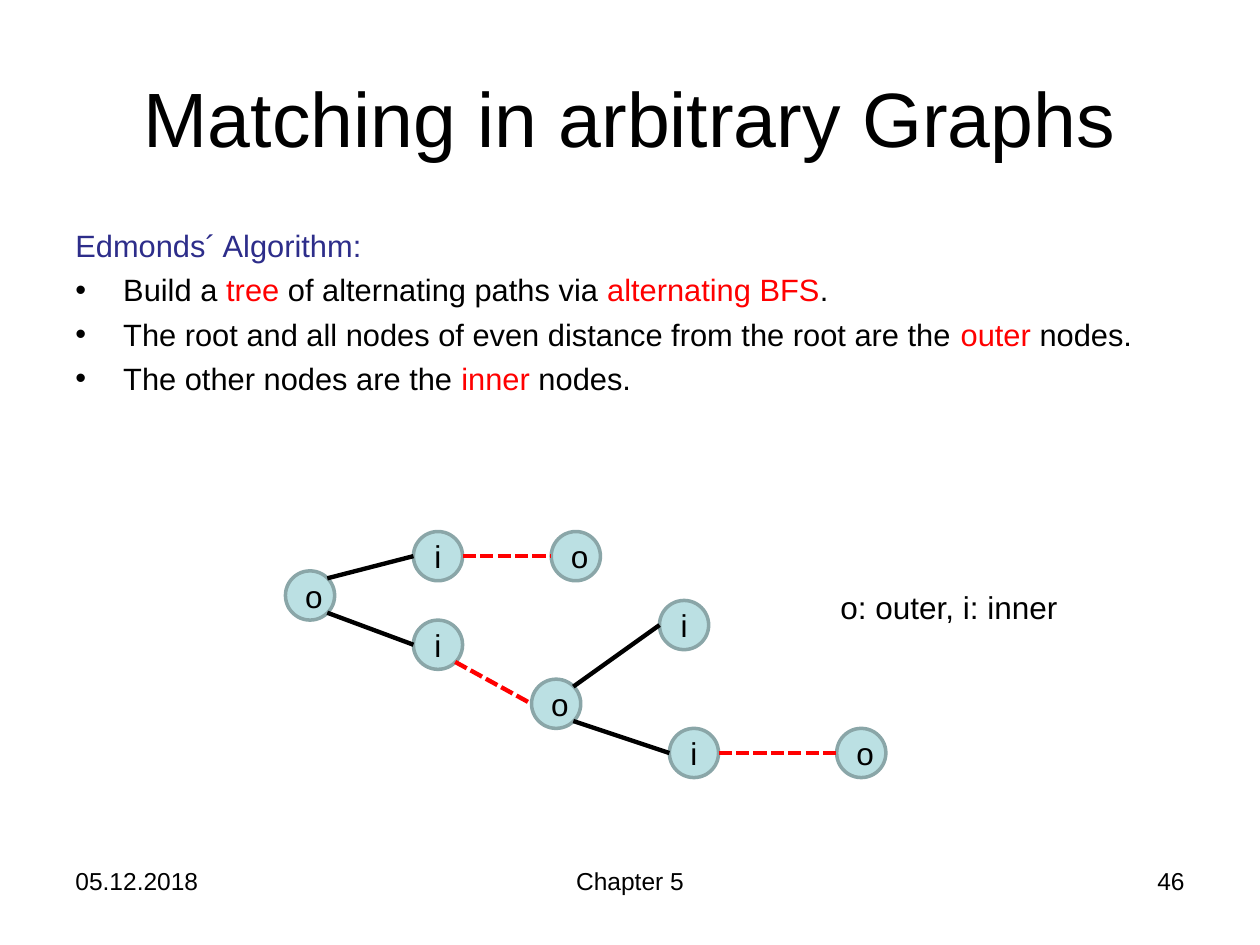
from dataclasses import dataclass

from lxml import etree
from pptx import Presentation
from pptx.dml.color import RGBColor
from pptx.enum.dml import MSO_LINE
from pptx.enum.shapes import MSO_CONNECTOR, MSO_SHAPE
from pptx.enum.text import MSO_ANCHOR, PP_ALIGN
from pptx.oxml.ns import qn
from pptx.util import Inches, Pt

LEFT, CENTER, RIGHT = PP_ALIGN.LEFT, PP_ALIGN.CENTER, PP_ALIGN.RIGHT
TOP, MIDDLE = MSO_ANCHOR.TOP, MSO_ANCHOR.MIDDLE
ELLIPSE, STRAIGHT, DASHED = MSO_SHAPE.OVAL, MSO_CONNECTOR.STRAIGHT, MSO_LINE.SQUARE_DOT

FONT = "Arial"
COLORS = {
    "black": "000000",
    "red": "FF0000",
    "heading": "2D2D8A",
    "node": "BBE0E3",
    "outline": "8AA6A8",
}

# The slide is a grid of 128 columns by 96 rows of square cells
SLIDE_WIDTH, SLIDE_HEIGHT = Inches(10), Inches(7.5)
CELL = SLIDE_WIDTH / 128
NODE_SIZE = 5
HANGING = Inches(0.38)

# Attachment points on a node, as shares of its size
SITES = {
    "left": (0, 0.5),
    "right": (1, 0.5),
    "upper right": (0.85, 0.15),
    "lower right": (0.85, 0.85),
}


@dataclass(frozen=True)
class Box:
    column: float
    row: float
    columns: float
    rows: float


@dataclass(frozen=True)
class Label:
    text: str
    box: Box
    size: float
    alignment: PP_ALIGN = LEFT
    anchor: MSO_ANCHOR = TOP
    wrap: bool = True


@dataclass(frozen=True)
class Node:
    label: str
    column: int
    row: int


@dataclass(frozen=True)
class Edge:
    start: str
    start_site: str
    end: str
    matched: bool = False


LABELS = [
    Label("Matching in arbitrary Graphs", Box(6.4, 3.84, 115.2, 16), 44, CENTER, MIDDLE),
    Label("05.12.2018", Box(6.4, 87.4, 29.9, 6.66), 14),
    Label("Chapter 5", Box(43.7, 87.4, 40.6, 6.66), 14, CENTER),
    Label("46", Box(91.7, 87.4, 29.9, 6.66), 14, RIGHT),
    Label("o: outer, i: inner", Box(84.1, 59.1, 24.8, 5.1), 18, wrap=False),
]

BODY_BOX = Box(6.4, 22.4, 115.2, 63.4)
BODY_SIZE = 17.6
HEADING = [("Edmonds´ Algorithm:", "heading")]
BULLETS = [
    [("Build a ", "black"), ("tree", "red"), (" of alternating paths via ", "black"),
     ("alternating BFS", "red"), (".", "black")],
    [("The root and all nodes of even distance from the root are the ", "black"),
     ("outer ", "red"), ("nodes.", "black")],
    [("The other nodes are the ", "black"), ("inner", "red"), (" nodes.", "black")],
]

NODES = {
    "root": Node("o", 29, 58),
    "upper inner": Node("i", 42, 54),
    "upper outer": Node("o", 56, 54),
    "lower inner": Node("i", 42, 63),
    "lower outer": Node("o", 54, 69),
    "branch inner": Node("i", 67, 61),
    "last inner": Node("i", 68, 74),
    "last outer": Node("o", 85, 74),
}
EDGES = [
    Edge("root", "upper right", "upper inner"),
    Edge("root", "lower right", "lower inner"),
    Edge("upper inner", "right", "upper outer", matched=True),
    Edge("lower inner", "lower right", "lower outer", matched=True),
    Edge("lower outer", "upper right", "branch inner"),
    Edge("lower outer", "lower right", "last inner"),
    Edge("last inner", "right", "last outer", matched=True),
]


def cells(*counts: float) -> list[int]:
    return [round(count * CELL) for count in counts]


def color(name: str) -> RGBColor:
    return RGBColor.from_string(COLORS[name])


def set_all(target, values: dict) -> None:
    for name, value in values.items():
        setattr(target, name, value)


def add_run(paragraph, text: str, size: float, color_name: str = "black") -> None:
    run = paragraph.add_run()
    run.text = text
    set_all(run.font, {"name": FONT, "size": Pt(size)})
    run.font.color.rgb = color(color_name)


def add_text_frame(slide, box: Box, wrap: bool = True, anchor: MSO_ANCHOR = TOP):
    shape = slide.shapes.add_textbox(*cells(box.column, box.row, box.columns, box.rows))
    set_all(shape.text_frame, {"word_wrap": wrap, "vertical_anchor": anchor})
    return shape.text_frame


def add_label(slide, label: Label) -> None:
    paragraph = add_text_frame(slide, label.box, label.wrap, label.anchor).paragraphs[0]
    paragraph.alignment = label.alignment
    add_run(paragraph, label.text, label.size)


def fill_body_paragraph(paragraph, pieces: list[tuple[str, str]], bullet: bool) -> None:
    paragraph.space_before = Pt(4.2)
    properties = paragraph._p.get_or_add_pPr()
    properties.set("marL", str(HANGING))
    properties.set("indent", str(-HANGING))
    if bullet:
        etree.SubElement(properties, qn("a:buFont")).set("typeface", FONT)
        etree.SubElement(properties, qn("a:buChar")).set("char", "•")
    else:
        etree.SubElement(properties, qn("a:buNone"))
    for text, color_name in pieces:
        add_run(paragraph, text, BODY_SIZE, color_name)


def add_body(slide) -> None:
    frame = add_text_frame(slide, BODY_BOX)
    fill_body_paragraph(frame.paragraphs[0], HEADING, bullet=False)
    for pieces in BULLETS:
        fill_body_paragraph(frame.add_paragraph(), pieces, bullet=True)


def add_node(slide, node: Node) -> None:
    shape = slide.shapes.add_shape(
        ELLIPSE, *cells(node.column, node.row, NODE_SIZE, NODE_SIZE))
    shape.shadow.inherit = False
    shape.fill.solid()
    shape.fill.fore_color.rgb = color("node")
    shape.line.color.rgb = color("outline")
    shape.line.width = Pt(2)
    shape.text_frame.vertical_anchor = MIDDLE
    paragraph = shape.text_frame.paragraphs[0]
    paragraph.alignment = CENTER
    add_run(paragraph, node.label, 18)


def site_position(node: Node, site: str) -> list[int]:
    across, down = SITES[site]
    return cells(node.column + across * NODE_SIZE, node.row + down * NODE_SIZE)


def add_edge(slide, edge: Edge) -> None:
    connector = slide.shapes.add_connector(
        STRAIGHT,
        *site_position(NODES[edge.start], edge.start_site),
        *site_position(NODES[edge.end], "left"))
    connector.line.color.rgb = color("red" if edge.matched else "black")
    connector.line.width = Pt(2.5)
    if edge.matched:
        connector.line.dash_style = DASHED
    etree.SubElement(connector._element.spPr, qn("a:effectLst"))


def main() -> None:
    presentation = Presentation()
    set_all(presentation, {"slide_width": SLIDE_WIDTH, "slide_height": SLIDE_HEIGHT})
    slide = presentation.slides.add_slide(presentation.slide_layouts[6])

    # Title, footer and legend, then the explanation
    for label in LABELS:
        add_label(slide, label)
    add_body(slide)

    # Alternating tree
    for node in NODES.values():
        add_node(slide, node)
    for edge in EDGES:
        add_edge(slide, edge)

    presentation.save("out.pptx")


if __name__ == "__main__":
    main()
